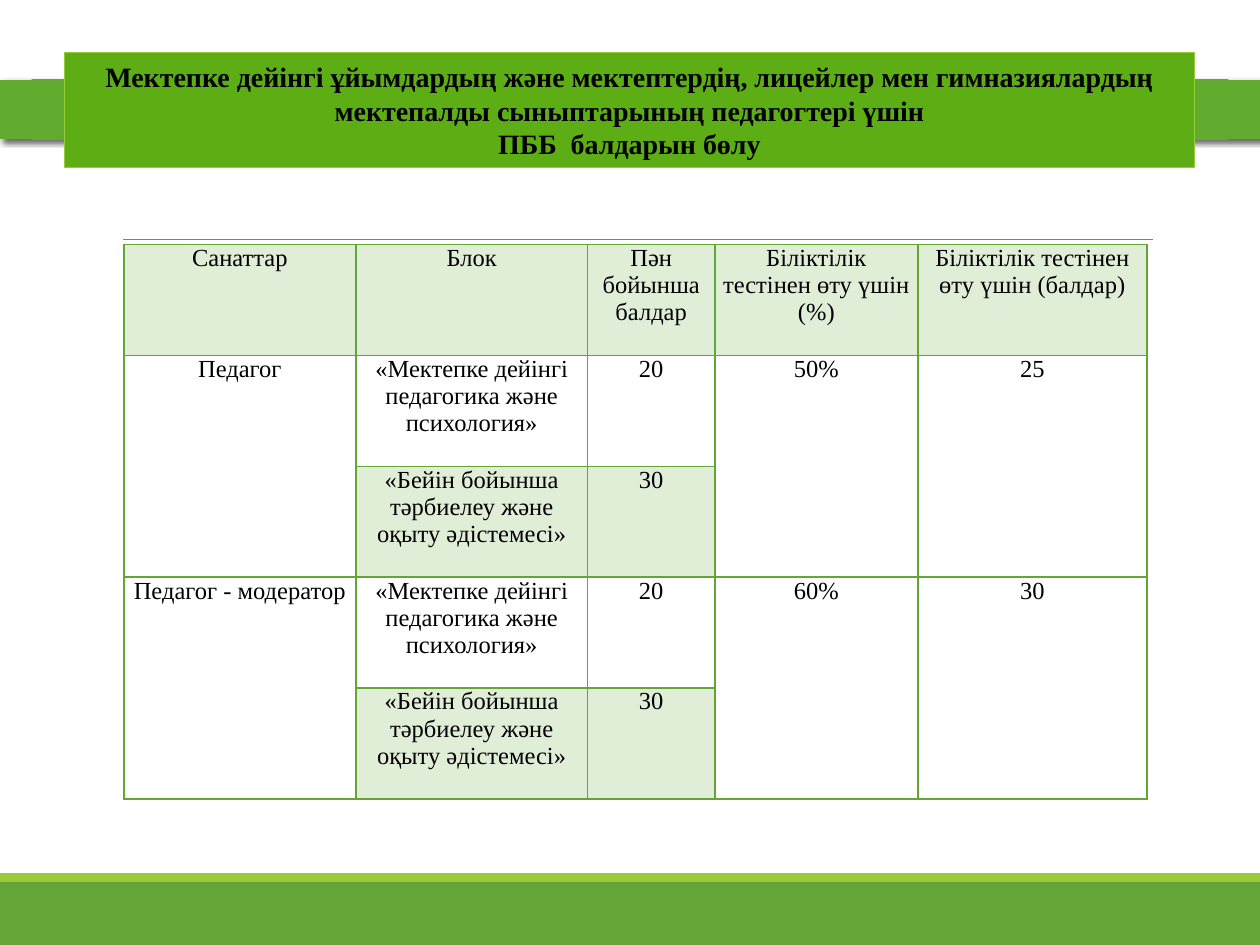
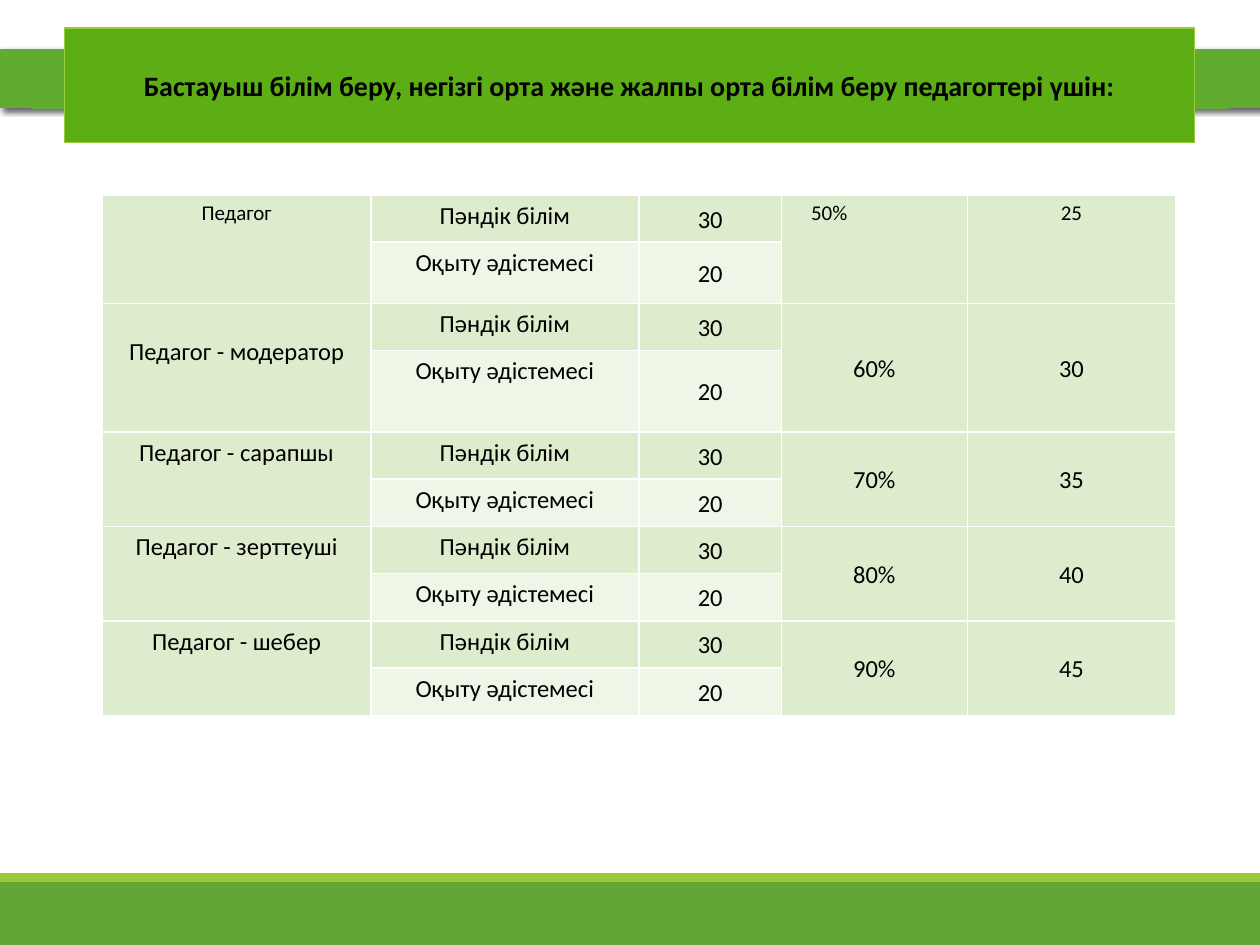
from itertools import product

from pptx import Presentation
from pptx.dml.color import RGBColor
from pptx.enum.shapes import MSO_CONNECTOR, MSO_SHAPE
from pptx.enum.text import MSO_ANCHOR, MSO_AUTO_SIZE, PP_ALIGN
from pptx.oxml import parse_xml
from pptx.oxml.ns import nsdecls, qn
from pptx.util import Pt

WIDE, HIGH = 720, 540
GREEN, LIME, TITLE = "63A537", "99CB38", "5DAE14"
BLACK, GRAY, WHITE = "000000", "808080", "FFFFFF"
SERIF, SANS = "Times New Roman", "Calibri"
GLOW = [(0, "59A924"), (34, "5BA827"), (70, "5BAD25"), (100, "62AB31")]
TOP, MID = MSO_ANCHOR.TOP, MSO_ANCHOR.MIDDLE


def rgb(code):
    return RGBColor.from_string(code)


def apply(target, values):
    for name, value in values.items():
        setattr(target, name, value)


def write(frame, lines, font, size, bold=False, **form):
    frame.text = "\n".join(lines)
    for para in frame.paragraphs:
        apply(para, {"alignment": PP_ALIGN.CENTER, **form})
        apply(para.font, {"name": font, "size": Pt(size), "bold": bold})
        para.font.color.rgb = rgb(BLACK)


def add_bar(slide, top, height, color):
    """Add a full-width bar without outline."""
    bar = slide.shapes.add_shape(
        MSO_SHAPE.RECTANGLE, 0, Pt(top), Pt(WIDE), Pt(height))
    bar.shadow.inherit = False
    bar.fill.solid()
    bar.fill.fore_color.rgb = rgb(color)
    bar.line.fill.background()
    return bar


def add_band(slide, top):
    """Add the bar behind the title, with a round gradient and a shadow."""
    props = add_bar(slide, top, 34, GREEN).element.spPr
    stops = "".join(
        f'<a:gs pos="{spot * 1000}"><a:srgbClr val="{color}"/></a:gs>'
        for spot, color in GLOW)
    props.replace(props.find(qn("a:solidFill")), parse_xml(
        f'<a:gradFill {nsdecls("a")}><a:gsLst>{stops}</a:gsLst>'
        '<a:path path="circle"><a:fillToRect l="100000" t="100000" '
        'r="100000" b="100000"/></a:path></a:gradFill>'))
    props.find(qn("a:effectLst")).append(parse_xml(
        f'<a:outerShdw {nsdecls("a")} blurRad="{Pt(3.5)}" dist="{Pt(2)}" '
        f'dir="2700000"><a:srgbClr val="{BLACK}"><a:alpha val="60000"/>'
        '</a:srgbClr></a:outerShdw>'))


def add_rule(slide):
    rule = slide.shapes.add_connector(
        MSO_CONNECTOR.STRAIGHT, Pt(70.5), Pt(136.8), Pt(659), Pt(136.8))
    rule.line.color.rgb = rgb(GRAY)
    rule.line.width = Pt(0.5)
    rule.element.spPr.append(parse_xml(f'<a:effectLst {nsdecls("a")}/>'))


def set_title(slide, top, lines, font):
    title = slide.shapes.title
    apply(title, {"left": Pt(36.7), "top": Pt(top),
                  "width": Pt(646), "height": Pt(65.5)})
    title.fill.solid()
    title.fill.fore_color.rgb = rgb(TITLE)
    title.line.color.rgb = rgb(LIME)
    title.line.width = Pt(0.75)
    frame = title.text_frame
    write(frame, lines, font, 16, True)
    apply(frame, {"word_wrap": True, "auto_size": MSO_AUTO_SIZE.NONE,
                  "vertical_anchor": MID})
    title.element.getparent().append(title.element)


def add_page(deck, top, lines, font):
    slide = deck.slides.add_slide(deck.slide_layouts[5])
    add_bar(slide, 504, 36, GREEN)
    add_bar(slide, 499, 5, LIME)
    add_rule(slide)
    add_band(slide, top + 15.5 if len(lines) > 1 else top + 12)
    set_title(slide, top, lines, font)
    return slide


def set_edges(cell, color):
    props = cell._tc.get_or_add_tcPr()
    for side in "LRTB":
        props.append(parse_xml(
            f'<a:ln{side} {nsdecls("a")} w="{Pt(1)}"><a:solidFill>'
            f'<a:srgbClr val="{color}"/></a:solidFill></a:ln{side}>'))


def add_grid(slide, left, top, widths, heights, edge, tones):
    """Add a bordered table whose rows take the two tones in turn."""
    grid = slide.shapes.add_table(
        len(heights), len(widths), Pt(left), Pt(top),
        Pt(sum(widths)), Pt(sum(heights))).table
    for col, width in zip(grid.columns, widths):
        col.width = Pt(width)
    for row, height in zip(grid.rows, heights):
        row.height = Pt(height)
    for row, col in product(range(len(heights)), range(len(widths))):
        cell = grid.cell(row, col)
        set_edges(cell, edge)
        tone = tones[row % 2]
        if tone:
            cell.fill.solid()
            cell.fill.fore_color.rgb = rgb(tone)
        else:
            cell.fill.background()
    return grid


def put(cell, text, font, size, pad, anchor=TOP, **form):
    side, edge = pad
    apply(cell, {"margin_left": Pt(side), "margin_right": Pt(side),
                 "margin_top": Pt(edge), "margin_bottom": Pt(edge),
                 "vertical_anchor": anchor})
    write(cell.text_frame, [text], font, size, **form)


def fill_group(grid, row, group, blocks, style, anchors, small=None):
    """Fill two rows: merged rank, percent and points around two blocks."""
    for col, text in zip((0, 3, 4), group):
        cell = grid.cell(row, col)
        cell.merge(grid.cell(row + 1, col))
        put(cell, text, anchor=anchors[col], **{**style, **(small or {})})
    for step, block in enumerate(blocks):
        for col, text in enumerate(block, 1):
            put(grid.cell(row + step, col), text, anchor=anchors[col], **style)


def add_preschool(deck):
    slide = add_page(deck, 30.2, [
        "Мектепке дейінгі ұйымдардың және мектептердің, лицейлер мен "
        "гимназиялардың мектепалды сыныптарының педагогтері үшін",
        "ПББ  балдарын бөлу"], SERIF)
    grid = add_grid(slide, 70.8, 139.7, [132.5, 132.5, 72.7, 116, 131],
                    [63.4] * 5, GREEN, ("E0EDD7", None))
    style = {"font": SERIF, "size": 14, "pad": (4.3, 0)}
    heads = ["Санаттар", "Блок", "Пән бойынша балдар",
             "Біліктілік тестінен өту үшін (%)",
             "Біліктілік тестінен өту үшін (балдар)"]
    for col, head in enumerate(heads):
        put(grid.cell(0, col), head, **style)
    blocks = [("«Мектепке дейінгі педагогика және психология»", "20"),
              ("«Бейін бойынша тәрбиелеу және оқыту әдістемесі»", "30")]
    groups = [("Педагог", "50%", "25"), ("Педагог - модератор", "60%", "30")]
    for index, group in enumerate(groups):
        fill_group(grid, 1 + 2 * index, group, blocks, style, [TOP] * 5)


def add_school(deck):
    slide = add_page(deck, 16, [
        "Бастауыш білім беру, негізгі орта және жалпы орта білім беру "
        "педагогтері үшін:"], SANS)
    grid = add_grid(slide, 58.6, 111.4, [153.3, 153.3, 81.3, 106.3, 119],
                    [27, 35, 27, 46.5] + [27] * 6, WHITE,
                    ("DEECCE", "EFF6E8"))
    style = {"font": SANS, "size": 14, "pad": (3.6, 2.2),
             "line_spacing": 1.07}
    blocks = [("Пәндік білім", "30"), ("Оқыту әдістемесі", "20")]
    groups = [("Педагог", "50%", "25"), ("Педагог - модератор", "60%", "30"),
              ("Педагог - сарапшы", "70%", "35"),
              ("Педагог - зерттеуші", "80%", "40"),
              ("Педагог - шебер", "90%", "45")]
    for index, group in enumerate(groups):
        ends = MID if index else TOP
        fill_group(grid, 2 * index, group, blocks, style,
                   [TOP, TOP, MID, ends, ends],
                   None if index else {"size": 12})
    half = grid.cell(0, 3)
    half.margin_left = Pt(17)
    half.text_frame.paragraphs[0].alignment = PP_ALIGN.LEFT
    grid.cell(2, 0).margin_top = Pt(18)


def main():
    deck = Presentation()
    apply(deck, {"slide_width": Pt(WIDE), "slide_height": Pt(HIGH)})
    add_preschool(deck)
    add_school(deck)
    deck.save("out.pptx")


if __name__ == "__main__":
    main()
